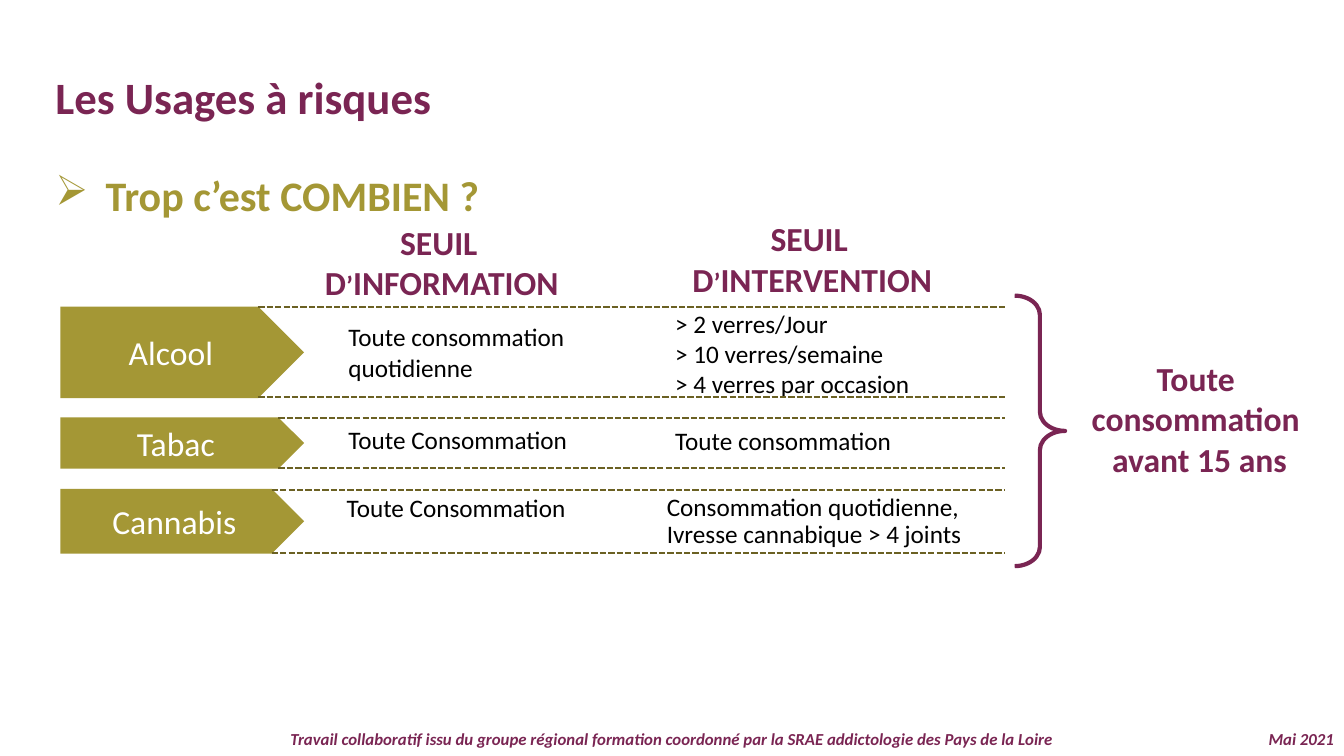
from lxml import etree
from pptx import Presentation, util as u
from pptx.dml.color import RGBColor
from pptx.enum import dml, shapes, text
from pptx.oxml import ns

prs = Presentation()
prs.slide_width, prs.slide_height = u.Inches(13.33), u.Inches(7.5)
COL, ROW = prs.slide_width / 160, prs.slide_height / 90
PLUM, OLIVE, DARK_OLIVE, WHITE, BLACK = "7A2553", "A49735", "6B6123", "FFFFFF", "000000"
LEFT, CENTER, RIGHT = text.PP_ALIGN.LEFT, text.PP_ALIGN.CENTER, text.PP_ALIGN.RIGHT
TOP, MIDDLE = text.MSO_ANCHOR.TOP, text.MSO_ANCHOR.MIDDLE


def rgb(value):
    return RGBColor.from_string(value)


def grid(x, y, w, h):
    return round(x * COL), round(y * ROW), round(w * COL), round(h * ROW)


def write(sp, words, size, color, align=LEFT, anchor=TOP, bold=False, italic=False,
          spacing=None, small_caps=False, bullet=None):
    tf = sp.text_frame
    tf.text = words
    tf.word_wrap = True
    tf.vertical_anchor = anchor
    for p in tf.paragraphs:
        p.alignment = align
        if spacing:
            p.line_spacing = spacing
        if bullet:
            pPr = p._p.get_or_add_pPr()
            pPr.set("marL", str(u.Inches(0.5)))
            pPr.set("indent", str(u.Inches(-0.5)))
            etree.SubElement(pPr, ns.qn("a:buChar")).set("char", bullet)
        for r in p.runs:
            r.font.name, r.font.size = "Calibri", u.Pt(size)
            r.font.bold, r.font.italic = bold, italic
            r.font.color.rgb = rgb(color)
            if small_caps:
                r._r.get_or_add_rPr().set("cap", "small")


def add_text(s, box, words, size, color, **style):
    write(s.shapes.add_textbox(*grid(*box)), words, size, color, **style)


def add_dashed_line(s, x1, x2, y):
    line = s.shapes.add_connector(shapes.MSO_CONNECTOR.STRAIGHT, round(x1 * COL), round(y * ROW),
                                  round(x2 * COL), round(y * ROW))
    line.line.color.rgb = rgb(DARK_OLIVE)
    line.line.width = u.Pt(1.5)
    line.line.dash_style = dml.MSO_LINE.SQUARE_DOT
    etree.SubElement(line._element.spPr, ns.qn("a:effectLst"))


def add_heading(s, box):
    x, y, w, h = box
    title = s.shapes.title
    title.left, title.top, title.width, title.height = grid(x, y, w, h)
    write(title, "Les Usages à risques", 32, PLUM, bold=True, anchor=MIDDLE)
    add_text(s, (x, y + 12.6, w, h), "Trop c’est COMBIEN ?", 30, OLIVE,
             bold=True, spacing=0.9, bullet="➢")


def add_substance(s, box, name, cells, spacing):
    x, y, w, h = box
    arrow_w = 29
    arrow = s.shapes.add_shape(shapes.MSO_SHAPE.PENTAGON, *grid(x, y, arrow_w, h))
    arrow.shadow.inherit = False
    arrow.fill.solid()
    arrow.fill.fore_color.rgb = rgb(OLIVE)
    arrow.line.fill.background()
    write(arrow, name, 24, WHITE, align=CENTER, anchor=MIDDLE)
    for words, dx, dy, cell_w in cells:
        add_text(s, (x + dx, y + dy, cell_w, h), words, 18, BLACK, spacing=spacing)
    for edge in (y + 0.1, y + h - 0.1):
        add_dashed_line(s, x + arrow_w - h / 2, x + w, edge)


def add_thresholds(s, box):
    x, y, w, h = box
    for words, dx, dy, head_w in (("SEUIL \vD’INFORMATION", 23.8, -10.7, 43.2),
                                  ("SEUIL \vD’INTERVENTION", 68.6, -11.1, 41.8)):
        add_text(s, (x + dx, y + dy, head_w, 10.9), words, 24, PLUM,
                 align=CENTER, bold=True, small_caps=True)
    substances = (
        ("Alcool", 0, 10.9, None,
         (("Toute consommation quotidienne", 33.1, 1.2, 30.2),
          ("> 2 verres/Jour\v> 10 verres/semaine\v> 4 verres par occasion", 72, -0.4, 51.6))),
        ("Tabac", 13.2, 6.1, 0.9,
         (("Toute Consommation", 33.1, 0.6, 33.4),
          ("Toute consommation", 72, 0.8, 31.3))),
        ("Cannabis", 21.7, 7.7, 0.9,
         (("Toute Consommation", 32.9, 0.2, 33.4),
          ("Consommation quotidienne,\vIvresse cannabique > 4 joints", 71, 0.1, 48.7))),
    )
    for name, dy, row_h, spacing, cells in substances:
        add_substance(s, (x, y + dy, w, row_h), name, cells, spacing)


def add_age_limit(s, box):
    x, y, w, h = box
    brace_w = 6
    brace = s.shapes.add_shape(shapes.MSO_SHAPE.RIGHT_BRACE, *grid(x, y, brace_w, h))
    brace.shadow.inherit = False
    brace.adjustments[0], brace.adjustments[1] = 0.38, 0.5
    brace.fill.background()
    brace.line.color.rgb = rgb(PLUM)
    brace.line.width = u.Pt(3)
    add_text(s, (x + brace_w - 0.6, y + 6.8, w - brace_w, 16.9),
             "Toute \nconsommation \navant 15 ans", 24, PLUM, align=CENTER, bold=True)


def add_footer(s, box):
    x, y, w, h = box
    credit = ("Travail collaboratif issu du groupe régional formation coordonné "
              "par la SRAE addictologie des Pays de la Loire")
    date_w = 13.1
    for part, words, align in (((x, y, w, h), credit, CENTER),
                               ((x + w - date_w, y, date_w, h), "Mai 2021", RIGHT)):
        add_text(s, part, words, 12, PLUM, align=align, bold=True, italic=True, spacing=0.9)


def main():
    s = prs.slides.add_slide(prs.slide_layouts[5])
    add_footer(s, (0, 86.4, 160, 3.6))
    add_heading(s, (5.4, 7.7, 150, 7.7))
    add_thresholds(s, (7.2, 36.5, 112.4, 29.4))
    add_age_limit(s, (120.8, 35.2, 39.2, 32.2))
    prs.save("out.pptx")


if __name__ == "__main__":
    main()
